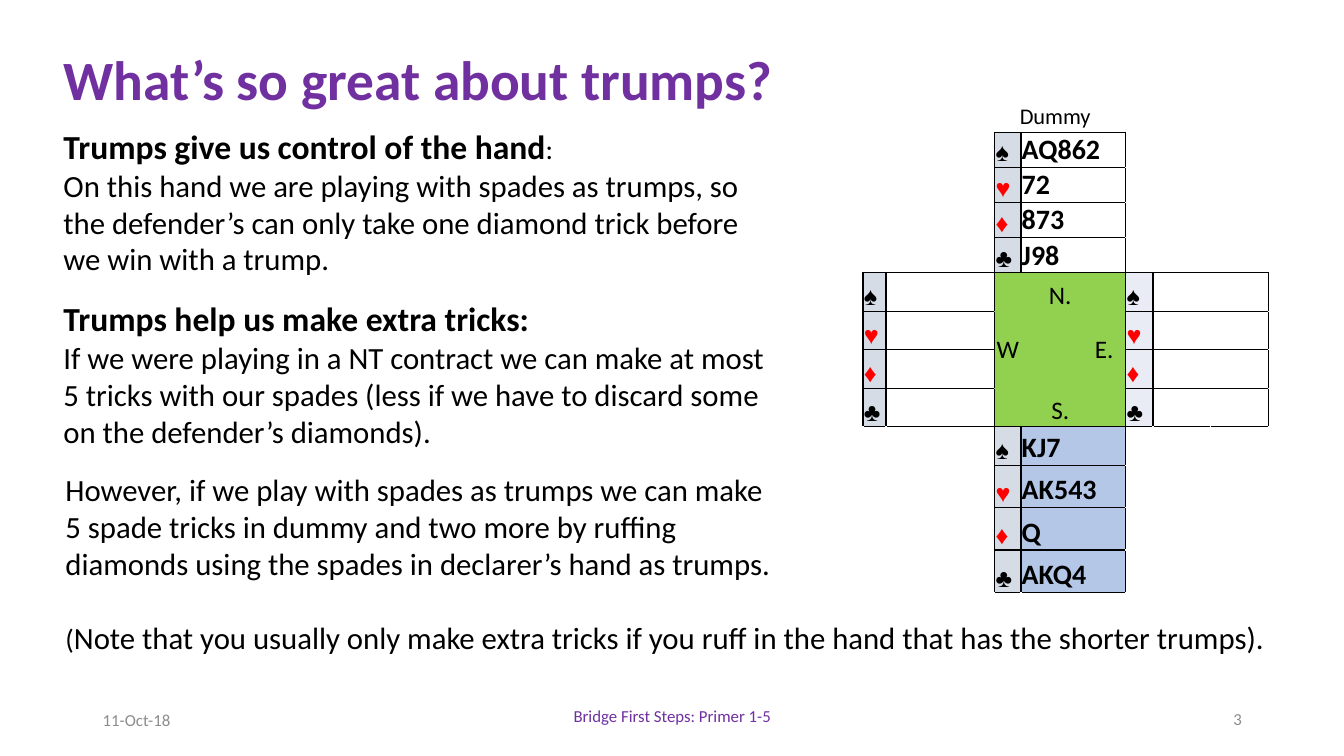
from pptx import Presentation
from pptx.dml.color import RGBColor
from pptx.enum.text import MSO_ANCHOR, MSO_AUTO_SIZE, PP_ALIGN
from pptx.oxml.ns import qn
from pptx.util import Cm, Pt
from lxml import etree

LEFT, CENTER, RIGHT = PP_ALIGN.LEFT, PP_ALIGN.CENTER, PP_ALIGN.RIGHT
TOP, MIDDLE, BOTTOM = MSO_ANCHOR.TOP, MSO_ANCHOR.MIDDLE, MSO_ANCHOR.BOTTOM
FIT_SHAPE, FIT_NONE = MSO_AUTO_SIZE.SHAPE_TO_FIT_TEXT, MSO_AUTO_SIZE.NONE

BLACK, WHITE, RED = "000000", "FFFFFF", "FF0000"
PURPLE, GREY, GREEN = "7030A0", "8C8C8C", "92D050"
SUIT_FILL, EAST_FILL, DECLARER_FILL = "D6DCE5", "E9EBF5", "B4C7E7"

COLUMN_WIDTHS = [0.69, 0.58, 2.74, 0.66, 2.64, 0.69, 1.45, 1.45, 1.45]
ROW_HEIGHTS = [1.04, 0.81, 0.79, 0.76, 0.61] + [0.97] * 5 + [1.07] * 3 + [0.76]
SUITS = [("♠", BLACK), ("♥", RED), ("♦", RED), ("♣", BLACK)]
NORTH_ROW, MIDDLE_ROW, SOUTH_ROW = 1, 5, 9
WEST_COLUMN, CENTER_COLUMN, EAST_COLUMN = 1, 3, 5
HANDS = [
    (NORTH_ROW, CENTER_COLUMN, SUIT_FILL, None, ["AQ862", "72", "873", "J98"]),
    (MIDDLE_ROW, WEST_COLUMN, SUIT_FILL, None, []),
    (MIDDLE_ROW, EAST_COLUMN, EAST_FILL, None, []),
    (SOUTH_ROW, CENTER_COLUMN, SUIT_FILL, DECLARER_FILL, ["KJ7", "AK543", "Q", "AKQ4"]),
]
COMPASS = [
    (5, 3, "N.", CENTER, BOTTOM),
    (6, 3, "W", CENTER, MIDDLE),
    (6, 4, "E.", RIGHT, MIDDLE),
    (8, 3, "S.", CENTER, BOTTOM),
]
MERGES = [(row, 1, row, 2) for row in (1, 2)]
MERGES += [(row, 6, row, 7) for row in range(5, 9)]
MERGES += [(5, 3, 5, 4), (6, 3, 7, 3), (6, 4, 7, 4), (8, 3, 8, 4)]
SIDES = [("a:lnL", 0, -1), ("a:lnR", 0, 1), ("a:lnT", -1, 0), ("a:lnB", 1, 0)]


def color(value):
    return RGBColor.from_string(value)


def in_center(row, column):
    return 5 <= row <= 8 and 3 <= column <= 4


def in_diagram(row, column):
    return (1 <= row <= 12 and 3 <= column <= 4) or (5 <= row <= 8 and 1 <= column <= 7)


def border_style(row, column, down, across):
    here, beside = (row, column), (row + down, column + across)
    if in_center(*here) and in_center(*beside) and (down or row in (6, 7)):
        return GREEN, 0.25
    return (BLACK if in_diagram(*here) or in_diagram(*beside) else WHITE), 1


class SlideBuilder:
    font = "Calibri"

    def __init__(self, presentation):
        self.slide = presentation.slides.add_slide(presentation.slide_layouts[5])

    def run(self, paragraph, text, size, ink=BLACK, bold=False, font=None):
        run = paragraph.add_run()
        run.text = text
        run.font.size, run.font.bold = Pt(size), bold
        run.font.name = font or self.font
        run.font.color.rgb = color(ink)

    def title(self, text, left, top, width, height):
        shape = self.slide.shapes.title
        shape.left, shape.top, shape.width, shape.height = map(Cm, (left, top, width, height))
        frame = shape.text_frame
        frame.vertical_anchor, frame.auto_size = MIDDLE, FIT_NONE
        paragraph = frame.paragraphs[0]
        paragraph.alignment, paragraph.line_spacing = LEFT, 0.9
        self.run(paragraph, text, 39.6, PURPLE, True)

    def text(self, left, top, width, height, paragraphs, align=LEFT, anchor=TOP, fit=FIT_SHAPE):
        box = self.slide.shapes.add_textbox(*map(Cm, (left, top, width, height)))
        frame = box.text_frame
        frame.word_wrap, frame.auto_size, frame.vertical_anchor = True, fit, anchor
        for index, runs in enumerate(paragraphs):
            paragraph = frame.add_paragraph() if index else frame.paragraphs[0]
            paragraph.alignment = align
            for run in runs:
                self.run(paragraph, *run)

    def footer(self, left, top, width, text, ink, align):
        self.text(left, top, width, 1.02, [[(text, 12, ink)]], align, MIDDLE, FIT_NONE)

    def cell(self, cell, text, size, ink=BLACK, bold=False, font=None, fill=None,
             align=LEFT, anchor=BOTTOM):
        cell.vertical_anchor = anchor
        paragraph = cell.text_frame.paragraphs[0]
        paragraph.alignment = align
        self.run(paragraph, text, size, ink, bold, font)
        if fill:
            cell.fill.solid()
            cell.fill.fore_color.rgb = color(fill)

    def borders(self, cell, row, column):
        properties = cell._tc.get_or_add_tcPr()
        for index, (tag, down, across) in enumerate(SIDES):
            ink, width = border_style(row, column, down, across)
            line = etree.Element(qn(tag), w=str(int(Pt(width))))
            fill = etree.SubElement(line, qn("a:solidFill"))
            etree.SubElement(fill, qn("a:srgbClr"), val=ink)
            properties.insert(index, line)

    def deal(self, left, top):
        shape = self.slide.shapes.add_table(
            len(ROW_HEIGHTS), len(COLUMN_WIDTHS), Cm(left), Cm(top),
            Cm(sum(COLUMN_WIDTHS)), Cm(sum(ROW_HEIGHTS)))
        table = shape.table
        table.first_row = table.horz_banding = False
        for column, width in zip(table.columns, COLUMN_WIDTHS):
            column.width = Cm(width)
        for row, height in zip(table.rows, ROW_HEIGHTS):
            row.height = Cm(height)
        for row in range(len(ROW_HEIGHTS)):
            for column in range(len(COLUMN_WIDTHS)):
                cell = table.cell(row, column)
                cell.margin_left = cell.margin_right = cell.margin_top = Cm(0.02)
                cell.margin_bottom = 0
                cell.fill.background()
                if in_center(row, column):
                    cell.fill.solid()
                    cell.fill.fore_color.rgb = color(GREEN)
                self.borders(cell, row, column)
        for first_row, first_column, last_row, last_column in MERGES:
            table.cell(first_row, first_column).merge(table.cell(last_row, last_column))
        for first_row, column, suit_fill, card_fill, cards in HANDS:
            for index, (suit, ink) in enumerate(SUITS):
                self.cell(table.cell(first_row + index, column), suit, 18, ink,
                          font="Arial", fill=suit_fill)
            for index, holding in enumerate(cards):
                self.cell(table.cell(first_row + index, column + 1), holding, 20,
                          bold=True, fill=card_fill)
        for row, column, text, align, anchor in COMPASS:
            self.cell(table.cell(row, column), text, 18, align=align, anchor=anchor)
        table.cell(6, 3).text_frame.paragraphs[0].alignment = CENTER
        table.cell(6, 4).margin_right = Cm(0.31)


def main():
    presentation = Presentation()
    presentation.slide_width, presentation.slide_height = Cm(33.87), Cm(19.05)
    builder = SlideBuilder(presentation)
    builder.deal(21.06, 2.29)
    builder.title("What’s so great about trumps?", 1.35, 1.22, 29.64, 1.73)
    builder.footer(2.34, 17.63, 7.62, "11-Oct-18", GREY, LEFT)
    builder.footer(11.23, 17.53, 11.43, "Bridge First Steps: Primer 1-5", PURPLE, CENTER)
    builder.footer(23.93, 17.6, 7.62, "3", GREY, RIGHT)
    builder.text(1.35, 3.05, 18.26, 4.11, [
        [("Trumps give us control of the hand", 24, BLACK, True), (":", 20)],
        [("On this hand we are playing with spades as trumps, so the defender’s can only "
          "take one diamond trick before we win with a trump.", 22)]])
    builder.text(25.45, 2.46, 2.9, 0.94, [[("Dummy", 16)]])
    builder.text(1.35, 7.39, 18.26, 4.11, [
        [("Trumps help us make extra tricks:", 24, BLACK, True)],
        [("If we were playing in a NT contract we can make at most 5 tricks with our spades "
          "(less if we have to discard some on the defender’s diamonds).", 22)]])
    builder.text(1.4, 11.73, 18.52, 3.07, [
        [("However, if we play with spades as trumps we can make 5 spade tricks in dummy and "
          "two more by ruffing diamonds using the spades in declarer’s hand as trumps.", 22)]])
    builder.text(1.4, 15.47, 31.37, 1.19, [
        [("(", 20), ("Note that you usually only make extra tricks if you ruff in the hand "
                     "that has the shorter trumps).", 22)]])
    presentation.save("out.pptx")


if __name__ == "__main__":
    main()
